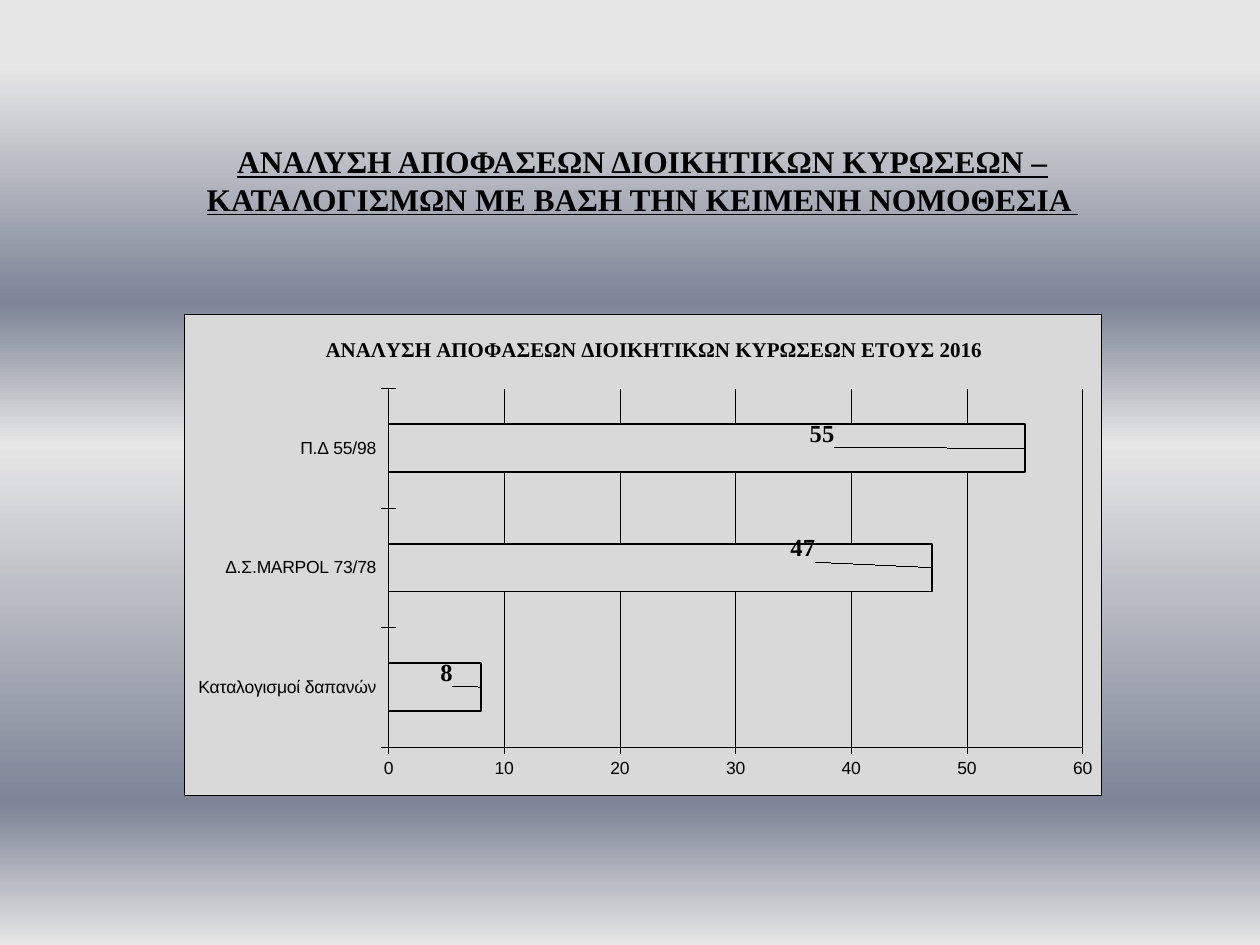
from dataclasses import dataclass

from pptx import Presentation
from pptx.chart.data import CategoryChartData
from pptx.dml.color import RGBColor
from pptx.enum.chart import XL_CHART_TYPE, XL_LABEL_POSITION, XL_TICK_LABEL_POSITION, XL_TICK_MARK
from pptx.enum.text import MSO_ANCHOR, PP_ALIGN
from pptx.oxml import parse_xml
from pptx.oxml.ns import nsdecls, qn
from pptx.util import Inches, Pt

BLACK = RGBColor(0x00, 0x00, 0x00)
PANEL = RGBColor(0xD9, 0xD9, 0xD9)
SILVER = RGBColor(0xE6, 0xE6, 0xE6)
STEEL = RGBColor(0x7D, 0x84, 0x96)

WIDTH, HEIGHT = Inches(10), Inches(7.5)
HAIRLINE = Pt(0.25)
BACKDROP = ((7, SILVER), (32, STEEL), (47, SILVER), (85, STEEL), (100, SILVER))

HEADING = "ΑΝΑΛΥΣΗ ΑΠΟΦΑΣΕΩΝ ΔΙΟΙΚΗΤΙΚΩΝ ΚΥΡΩΣΕΩΝ – ΚΑΤΑΛΟΓΙΣΜΩΝ ΜΕ ΒΑΣΗ ΤΗΝ ΚΕΙΜΕΝΗ ΝΟΜΟΘΕΣΙΑ "
CHART_HEADING = "ΑΝΑΛΥΣΗ ΑΠΟΦΑΣΕΩΝ ΔΙΟΙΚΗΤΙΚΩΝ ΚΥΡΩΣΕΩΝ ΕΤΟΥΣ 2016"

HEADING_FONT = {"name": "Times New Roman", "size": Pt(18), "bold": True, "underline": True}
CHART_HEADING_FONT = {"name": "Times New Roman", "size": Pt(12), "bold": True}
LABEL_FONT = {"name": "Times New Roman", "size": Pt(14), "bold": True}
AXIS_FONT = {"name": "Arial", "size": Pt(10), "bold": False}
HEADING_FRAME = {"word_wrap": True, "vertical_anchor": MSO_ANCHOR.BOTTOM, "margin_left": 0,
                 "margin_right": 0, "margin_top": Inches(0.05), "margin_bottom": 0}
TICKS = {"major_tick_mark": XL_TICK_MARK.CROSS, "minor_tick_mark": XL_TICK_MARK.NONE}
CATEGORY_AXIS = {**TICKS, "tick_label_position": XL_TICK_LABEL_POSITION.LOW,
                 "has_major_gridlines": False}
VALUE_AXIS = {**TICKS, "minimum_scale": 0, "maximum_scale": 60, "major_unit": 10,
              "has_major_gridlines": True}


@dataclass(frozen=True)
class Area:
    """A rectangle in shares of the slide's size."""
    left: float
    top: float
    width: float
    height: float

    def lengths(self) -> tuple:
        """Return the rectangle in slide units."""
        return tuple(int(share * side) for share, side in (
            (self.left, WIDTH), (self.top, HEIGHT), (self.width, WIDTH), (self.height, HEIGHT)))


@dataclass(frozen=True)
class Decision:
    """A legal basis, its number of decisions and the shift of its label."""
    basis: str
    count: int
    shift: tuple


HEADING_AREA = Area(0.09, 0.1, 0.84, 0.13)
CHART_AREA = Area(0.146, 0.332, 0.728, 0.51)
DECISIONS = (
    Decision("Καταλογισμοί δαπανών", 8, (-0.05, -0.03)),
    Decision("Δ.Σ.MARPOL 73/78", 47, (-0.16, -0.04)),
    Decision("Π.Δ 55/98", 55, (-0.24, -0.03)),
)


def apply(target, values: dict) -> None:
    """Set each format value on the target."""
    for attribute, value in values.items():
        setattr(target, attribute, value)


def style_font(font, values: dict) -> None:
    """Give a font its values in black."""
    apply(font, values)
    font.color.rgb = BLACK


def style_line(line, width=HAIRLINE) -> None:
    """Draw a line in black."""
    line.color.rgb = BLACK
    line.width = width


def place(part, index: int, settings: dict) -> None:
    """Give a chart part a manual layout."""
    for old in part.findall(qn("c:layout")):
        index = part.index(old)
        part.remove(old)
    entries = "".join(f'<c:{key} val="{value}"/>' for key, value in settings.items())
    part.insert(index, parse_xml(
        f'<c:layout {nsdecls("c")}><c:manualLayout>{entries}</c:manualLayout></c:layout>'))


def paint_backdrop(slide) -> None:
    """Fill the slide with the banded vertical gradient."""
    stops = "".join(f'<a:gs pos="{share * 1000}"><a:srgbClr val="{color}"/></a:gs>'
                    for share, color in BACKDROP)
    slide.element.cSld.insert(0, parse_xml(
        f'<p:bg {nsdecls("p", "a")}><p:bgPr><a:gradFill rotWithShape="1"><a:gsLst>{stops}</a:gsLst>'
        '<a:lin ang="5400000" scaled="0"/></a:gradFill><a:effectLst/></p:bgPr></p:bg>'))


def add_heading(slide) -> None:
    """Write the underlined heading."""
    frame = slide.shapes.add_textbox(*HEADING_AREA.lengths()).text_frame
    apply(frame, HEADING_FRAME)
    paragraph = frame.paragraphs[0]
    paragraph.alignment = PP_ALIGN.CENTER
    run = paragraph.add_run()
    run.text = HEADING
    style_font(run.font, HEADING_FONT)


def style_panel(chart) -> None:
    """Give the chart its grey panel, title and plot position."""
    space = chart.element if hasattr(chart, "element") else chart._chartSpace
    space.find(qn("c:chart")).addnext(parse_xml(
        f'<c:spPr {nsdecls("c", "a")}><a:solidFill><a:srgbClr val="{PANEL}"/></a:solidFill>'
        f'<a:ln w="{HAIRLINE}"><a:solidFill><a:srgbClr val="{BLACK}"/></a:solidFill></a:ln></c:spPr>'))
    chart.has_title = True
    paragraph = chart.chart_title.text_frame.paragraphs[0]
    run = paragraph.add_run()
    run.text = CHART_HEADING
    style_font(run.font, CHART_HEADING_FONT)
    place(space.find(".//" + qn("c:title")), 1,
          {"xMode": "edge", "yMode": "edge", "x": 0.15, "y": 0.04})
    place(space.find(".//" + qn("c:plotArea")), 0,
          {"layoutTarget": "inner", "xMode": "edge", "yMode": "edge",
           "x": 0.223, "y": 0.155, "w": 0.757, "h": 0.744})


def style_bars(chart) -> None:
    """Outline the bars and set their value labels."""
    plot = chart.plots[0]
    apply(plot, {"gap_width": 150, "vary_by_categories": False})
    bars = plot.series[0]
    bars.format.fill.solid()
    bars.format.fill.fore_color.rgb = PANEL
    style_line(bars.format.line, Pt(1))
    apply(bars.data_labels, {"show_value": True, "position": XL_LABEL_POSITION.OUTSIDE_END})
    style_font(bars.data_labels.font, LABEL_FONT)
    for index, decision in enumerate(DECISIONS):
        label = bars.points[index].data_label
        style_font(label.font, LABEL_FONT)
        label.position = XL_LABEL_POSITION.OUTSIDE_END
    for mark, decision in zip(bars.data_labels._element.findall(qn("c:dLbl")), DECISIONS):
        place(mark, 1, dict(zip("xy", decision.shift)))


def add_decision_chart(slide) -> None:
    """Chart the decisions by legal basis."""
    data = CategoryChartData()
    data.categories = [decision.basis for decision in DECISIONS]
    data.add_series("Series 1", [decision.count for decision in DECISIONS])
    chart = slide.shapes.add_chart(
        XL_CHART_TYPE.BAR_CLUSTERED, *CHART_AREA.lengths(), data).chart
    chart.has_legend = False
    style_font(chart.font, AXIS_FONT)
    style_panel(chart)
    for axis, values in ((chart.category_axis, CATEGORY_AXIS), (chart.value_axis, VALUE_AXIS)):
        apply(axis, values)
        style_font(axis.tick_labels.font, AXIS_FONT)
        style_line(axis.format.line)
    style_line(chart.value_axis.major_gridlines.format.line)
    style_bars(chart)


def main() -> None:
    """Build and save the slide."""
    deck = Presentation()
    apply(deck, {"slide_width": WIDTH, "slide_height": HEIGHT})
    slide = deck.slides.add_slide(deck.slide_layouts[6])
    paint_backdrop(slide)
    add_heading(slide)
    add_decision_chart(slide)
    deck.save("out.pptx")


if __name__ == "__main__":
    main()
